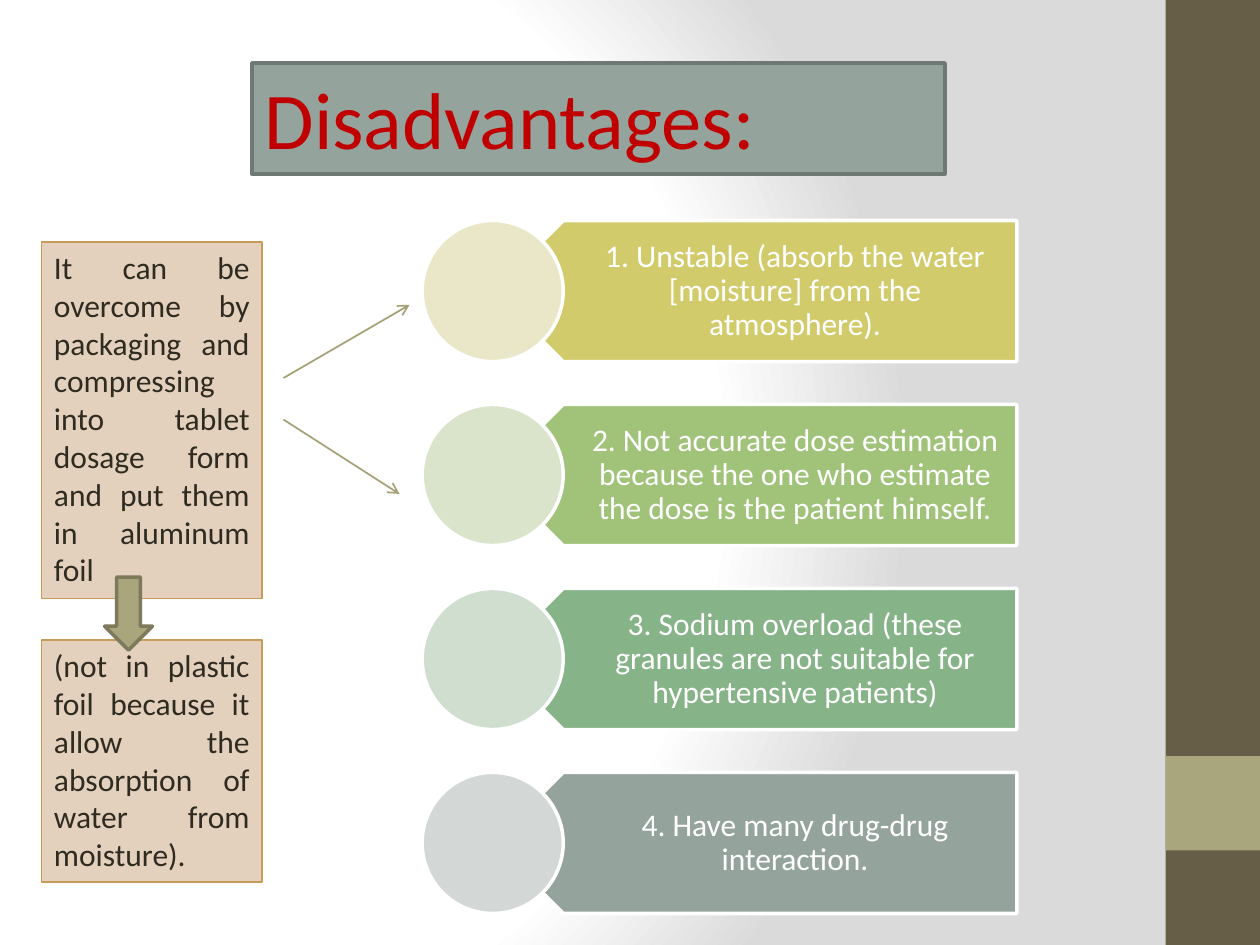
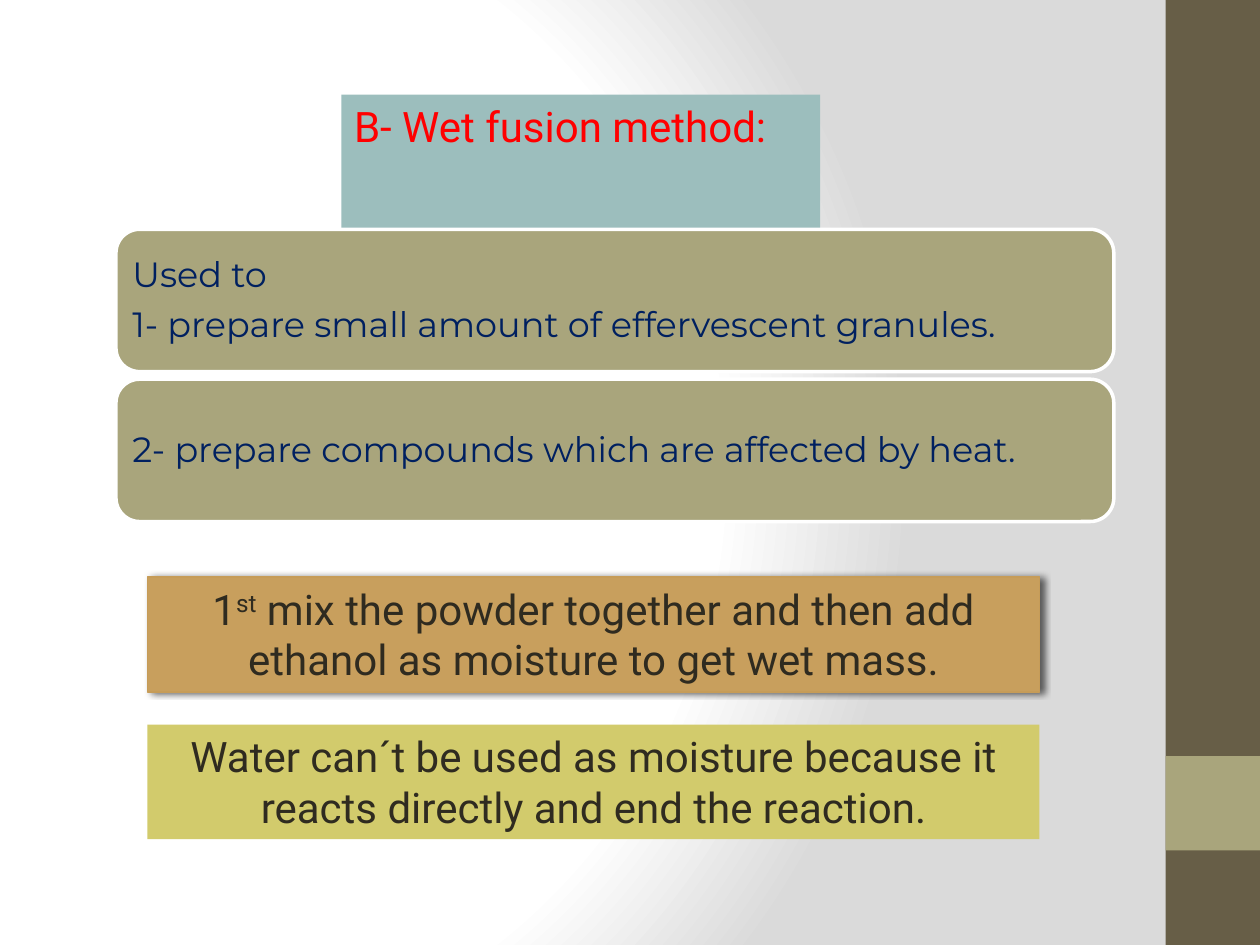
from pptx import Presentation
from pptx.dml.color import RGBColor
from pptx.enum.shapes import MSO_CONNECTOR, MSO_SHAPE
from pptx.enum.text import MSO_ANCHOR, MSO_AUTO_SIZE, PP_ALIGN
from pptx.oxml import parse_xml
from pptx.oxml.ns import nsdecls, qn
from pptx.util import Inches, Pt

HUE = {
    "white": "FFFFFF", "mist": "DADADA", "bark": "675E47", "sage": "A9A57C",
    "moss": "7D7A5C", "stem": "A6A278", "slate": "95A39D", "steel": "6E7974",
    "lime": "D2CB6C", "leaf": "A0C379", "fern": "87B388", "cream": "EAE7C8",
    "mint": "D9E4CB", "dew": "CFDECF", "fog": "D3D7D5", "sand": "E3D1BD",
    "gold": "C69C58", "clay": "C89F5D", "teal": "9CBEBD", "ink": "2F2B20",
    "navy": "002060", "wine": "C00000", "red": "FF0000",
}
PAD = (0.1, 0.05, 0.1, 0.05)
GROW = MSO_AUTO_SIZE.SHAPE_TO_FIT_TEXT


def put(item, vals):
    """Set each named value on an item."""
    for name, val in vals.items():
        setattr(item, name, val)


def tint(name):
    """Give a named colour."""
    return RGBColor.from_string(HUE[name])


def paint(shape, fill, line=None, width=1):
    """Fill and outline a shape."""
    shape.fill.solid()
    shape.fill.fore_color.rgb = tint(fill)
    if line:
        shape.line.color.rgb = tint(line)
        shape.line.width = Pt(width)
    else:
        shape.line.fill.background()


def draw(slide, kind, box, fill, line=None, width=1):
    """Add a flat preset shape in a box."""
    shape = slide.shapes.add_shape(kind, *map(Inches, box))
    shape.shadow.inherit = False
    paint(shape, fill, line, width)
    return shape


def write(shape, text, face, size, hue, align=PP_ALIGN.LEFT, pad=PAD,
          anchor=MSO_ANCHOR.TOP, auto=GROW, gap=None):
    """Set text by lines; parts between carets are raised."""
    frame = shape.text_frame
    sides = ("left", "top", "right", "bottom")
    put(frame, {f"margin_{side}": Inches(val) for side, val in zip(sides, pad)})
    put(frame, {"word_wrap": True, "vertical_anchor": anchor, "auto_size": auto})
    for row, line in enumerate(text.split("\n")):
        para = frame.add_paragraph() if row else frame.paragraphs[0]
        para.alignment = align
        if gap:
            put(para, {"line_spacing": 0.9, "space_after": Pt(gap)})
        for nth, part in enumerate(line.split("^")):
            run = para.add_run()
            run.text = part
            put(run.font, {"name": face, "size": Pt(size)})
            run.font.color.rgb = tint(hue)
            if nth % 2:
                run._r.get_or_add_rPr().set("baseline", "30000")


def label(slide, box, text, **form):
    """Add centred text over a shape."""
    area = slide.shapes.add_textbox(*map(Inches, box))
    write(area, text, anchor=MSO_ANCHOR.MIDDLE, auto=MSO_AUTO_SIZE.NONE, **form)


def head(slide, box, text, look, **form):
    """Format the title as a filled bar."""
    bar = slide.shapes.title
    put(bar, dict(zip(("left", "top", "width", "height"), map(Inches, box))))
    paint(bar, *look)
    write(bar, text, **form)


def arrow(slide, start, end):
    """Join two points with a thin arrow."""
    line = slide.shapes.add_connector(
        MSO_CONNECTOR.STRAIGHT, *map(Inches, start + end))
    line.line.color.rgb = tint("stem")
    line.line.width = Pt(1)
    ln = line.line._get_or_add_ln()
    ln.append(parse_xml(f'<a:tailEnd {nsdecls("a")} type="arrow"/>'))
    ln.getparent().append(parse_xml(f'<a:effectLst {nsdecls("a")}/>'))


def cast(shape):
    """Give a shape a soft shadow to the right."""
    effect = shape.element.spPr.find(qn("a:effectLst"))
    effect.append(parse_xml(
        f'<a:outerShdw {nsdecls("a")} blurRad="{Pt(4)}" dist="{Pt(2)}" dir="0">'
        '<a:srgbClr val="000000"><a:alpha val="60000"/></a:srgbClr>'
        '</a:outerShdw>'))


def theme(deck, slide):
    """Put the glow and the side bands on the master."""
    master = deck.slide_master
    master.background.fill.solid()
    back = master.element.cSld.find(qn("p:bg"))[0]
    stops = "".join(
        f'<a:gs pos="{pos}000"><a:srgbClr val="{HUE[hue]}"/></a:gs>'
        for pos, hue in ((0, "white"), (75, "white"), (100, "mist")))
    back.replace(back[0], parse_xml(
        f'<a:gradFill {nsdecls("a")} rotWithShape="1"><a:gsLst>{stops}</a:gsLst>'
        '<a:path path="circle"><a:fillToRect l="20000" t="50000" r="100000" '
        'b="50000"/></a:path></a:gradFill>'))
    bands = ((0, 7.5, "bark"), (6, 0.75, "sage"))
    for nth, (top, high, hue) in enumerate(bands):
        band = draw(slide, MSO_SHAPE.RECTANGLE, (9.25, top, 0.75, high), hue)
        band.element.nvSpPr.cNvPr.set("id", str(101 + nth))
        master.shapes.element.insert(2 + nth, band.element)


def flags(slide, box, rows):
    """Stack pointed bars, each led by a disc."""
    left, top, wide, step = box
    size = 1.12
    for nth, (text, fill, disc) in enumerate(rows):
        y = top + nth * step
        start = left + size / 2
        flag = draw(slide, MSO_SHAPE.PENTAGON,
                    (start, y, wide - size / 2, size), fill, "white", 2)
        flag.rotation = 180
        label(slide, (start + 0.28, y, wide - size / 2 - 0.28, size), text,
              face="Calibri", size=18, hue="white", align=PP_ALIGN.CENTER,
              pad=(0.5, 0.07, 0.14, 0.07), gap=6)
        draw(slide, MSO_SHAPE.OVAL, (left, y, size, size), disc, "white", 2)


def notes(slide, box):
    """Stack the two remedy notes and the arrow between them."""
    left, top, wide = box
    rows = (
        (0, 2.83, "It can be overcome by packaging and compressing into tablet "
                  "dosage form and put them in aluminum foil"),
        (3.16, 1.92, "(not in plastic foil because it allow the absorption of "
                     "water from moisture)."),
    )
    for drop, high, text in rows:
        card = draw(slide, MSO_SHAPE.RECTANGLE, (left, top + drop, wide, high),
                    "sand", "gold")
        write(card, text, "Calibri", 18, "ink", PP_ALIGN.JUSTIFY)
    draw(slide, MSO_SHAPE.DOWN_ARROW, (left + 0.5, top + 2.66, 0.38, 0.58),
         "sage", "moss", 2)


def uses(slide, box, rows):
    """Stack rounded panels of uses."""
    left, top, wide, high = box
    for nth, text in enumerate(rows):
        y = top + nth * (high + 0.06)
        draw(slide, MSO_SHAPE.ROUNDED_RECTANGLE, (left, y, wide, high),
             "sage", "white", 2)
        label(slide, (left + 0.05, y + 0.06, wide - 0.11, high - 0.11), text,
              face="Montserrat", size=20, hue="navy", pad=(0.08,) * 4, gap=7)


def steps(slide, box):
    """Stack the two method boxes."""
    left, top, wide, high = box
    rows = (
        ("1^st^ mix the powder together and then add ethanol as moisture to "
         "get wet mass.", "clay", "gold"),
        ("Water can´t be used as moisture because it reacts directly and end "
         "the reaction.", "lime", None),
    )
    for nth, (text, fill, line) in enumerate(rows):
        card = draw(slide, MSO_SHAPE.RECTANGLE,
                    (left, top + nth * 1.17, wide, high), fill, line)
        write(card, text, "Roboto", 24, "ink", PP_ALIGN.CENTER)
        if line:
            cast(card)


def faults(slide):
    """Build the slide of disadvantages."""
    head(slide, (2, 0.5, 5.5, 0.88), "Disadvantages:", ("slate", "steel", 2),
         face="Calibri", size=46, hue="wine")
    flags(slide, (3.35, 1.75, 4.72, 1.46), (
        ("1. Unstable (absorb the water [moisture] from the atmosphere).",
         "lime", "cream"),
        ("2. Not accurate dose estimation because the one who estimate the "
         "dose is the patient himself.", "leaf", "mint"),
        ("3. Sodium overload (these granules are not suitable for "
         "hypertensive patients)", "fern", "dew"),
        ("4. Have many drug-drug interaction.", "slate", "fog"),
    ))
    arrow(slide, (2.25, 3), (3.25, 2.42))
    arrow(slide, (2.25, 3.33), (3.17, 3.92))
    notes(slide, (0.33, 1.92, 1.75))


def fusion(slide):
    """Build the slide of the wet method."""
    head(slide, (2.71, 0.75, 3.8, 0.5), "B- Wet fusion method:", ("teal",),
         face="Roboto", size=24, hue="red")
    uses(slide, (0.92, 1.82, 7.92, 1.13), (
        "Used to\n1- prepare small amount of effervescent granules.",
        "2- prepare compounds which are affected by heat.",
    ))
    steps(slide, (1.17, 4.58, 7.08, 0.91))


def main():
    """Build and save the deck."""
    deck = Presentation()
    put(deck, {"slide_width": Inches(10), "slide_height": Inches(7.5)})
    for nth, build in enumerate((faults, fusion)):
        slide = deck.slides.add_slide(deck.slide_layouts[5])
        if not nth:
            theme(deck, slide)
        build(slide)
    deck.save("out.pptx")


if __name__ == "__main__":
    main()
